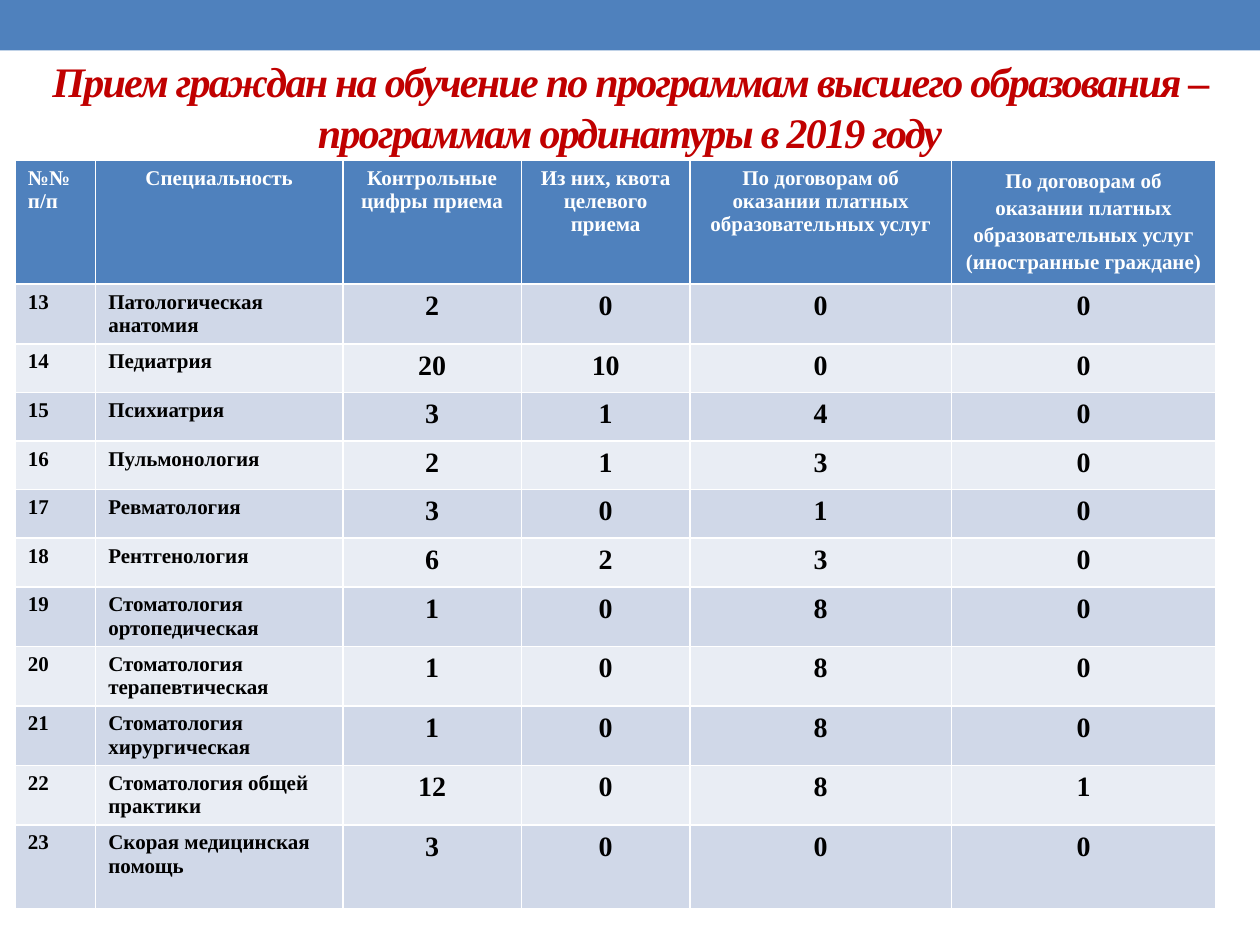
import pptx
import pptx.dml.color
import pptx.enum.shapes
import pptx.enum.text
import pptx.util

Cm = pptx.util.Cm
CENTER = pptx.enum.text.PP_ALIGN.CENTER


def rgb(value):
    return pptx.dml.color.RGBColor.from_string(value)


def style(p, size, color):
    for r in p.runs:
        r.font.name = "Times New Roman"
        r.font.size = pptx.util.Pt(size)
        r.font.bold = True
        r.font.color.rgb = rgb(color)


prs = pptx.Presentation()
prs.slide_width = Cm(25.4)
prs.slide_height = Cm(19.05)
s = prs.slides.add_slide(prs.slide_layouts[6])

band = s.shapes.add_shape(pptx.enum.shapes.MSO_SHAPE.RECTANGLE, 0, 0, prs.slide_width, Cm(1.02))
band.shadow.inherit = False
band.fill.solid()
band.fill.fore_color.rgb = rgb("4F81BD")
band.line.fill.background()

paid = "По договорам об оказании платных образовательных услуг"
rows = [
    ("№№\nп/п", "Специальность", "Контрольные цифры приема", "Из них, квота целевого приема",
     paid, paid + "\n(иностранные граждане)"),
    ("13", "Патологическая анатомия", "2", "0", "0", "0"),
    ("14", "Педиатрия", "20", "10", "0", "0"),
    ("15", "Психиатрия", "3", "1", "4", "0"),
    ("16", "Пульмонология", "2", "1", "3", "0"),
    ("17", "Ревматология", "3", "0", "1", "0"),
    ("18", "Рентгенология", "6", "2", "3", "0"),
    ("19", "Стоматология ортопедическая", "1", "0", "8", "0"),
    ("20", "Стоматология терапевтическая", "1", "0", "8", "0"),
    ("21", "Стоматология хирургическая", "1", "0", "8", "0"),
    ("22", "Стоматология общей практики", "12", "0", "8", "1"),
    ("23", "Скорая медицинская помощь", "3", "0", "0", "0"),
]
widths = [1.62, 4.98, 3.6, 3.4, 5.27, 5.33]
heights = [2.5, 1.2] + [0.98] * 5 + [1.2] * 4 + [1.68]

table = s.shapes.add_table(len(rows), len(widths), Cm(0.31), Cm(3.23),
                           Cm(sum(widths)), Cm(sum(heights))).table
for column, width in zip(table.columns, widths):
    column.width = Cm(width)
for i, (values, height) in enumerate(zip(rows, heights)):
    table.rows[i].height = Cm(height)
    header = i == 0
    fill = "4F81BD" if header else ("E9EDF4", "D0D8E8")[i % 2]
    for j, value in enumerate(values):
        cell = table.cell(i, j)
        cell.fill.solid()
        cell.fill.fore_color.rgb = rgb(fill)
        cell.text_frame.text = value
        for p in cell.text_frame.paragraphs:
            style(p, 12 if header or j < 2 else 16, "FFFFFF" if header else "000000")
            if j > 1 or (header and j == 1):
                p.alignment = CENTER
            if header and j == 5:
                p.line_spacing = 1.15

title = s.shapes.add_textbox(0, Cm(1), prs.slide_width, Cm(2.31))
tf = title.text_frame
tf.word_wrap = True
tf.text = "Прием граждан на обучение по программам высшего образования – программам ординатуры в 2019 году"
p = tf.paragraphs[0]
p.alignment = CENTER
style(p, 24, "C00000")
r = p.runs[0]
r.font.italic = True
r.font._element.set("spc", "-100")

prs.save("out.pptx")
